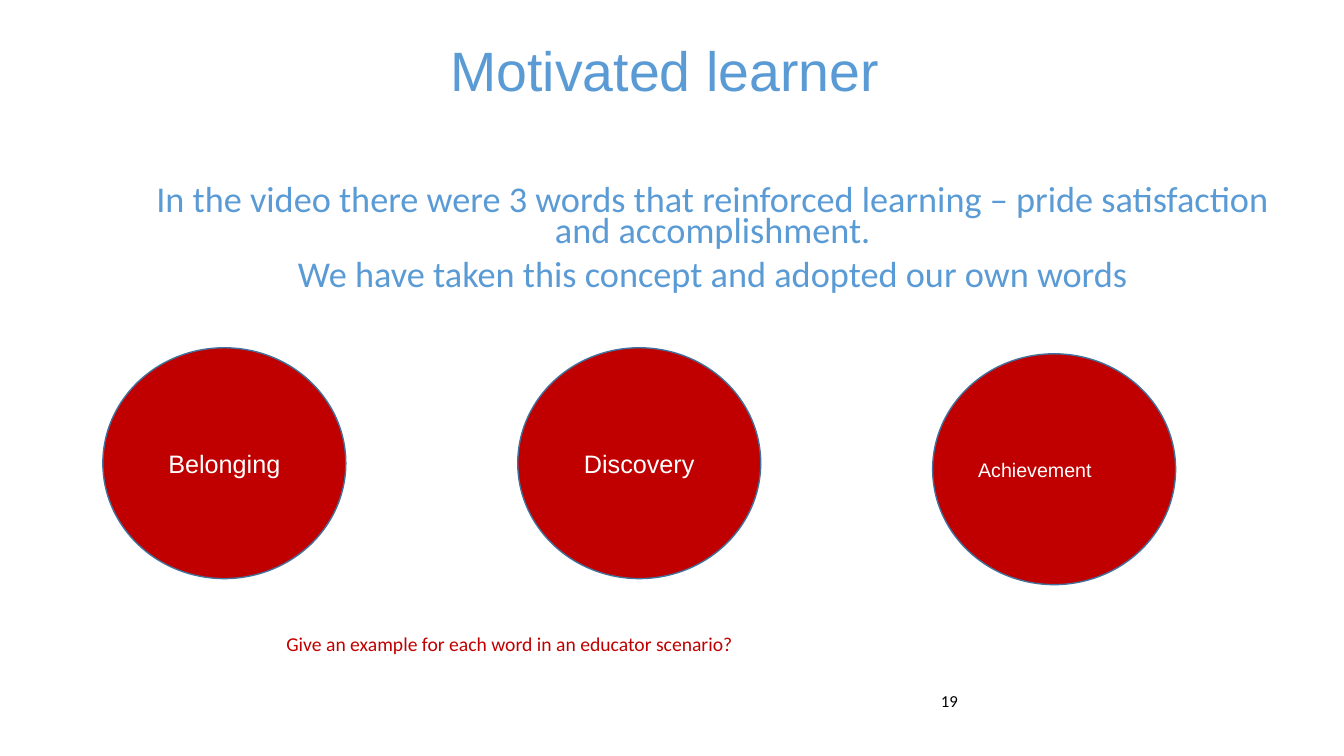
from pptx import Presentation
from pptx.dml.color import RGBColor
from pptx.enum.shapes import MSO_SHAPE as Shape
from pptx.enum.text import MSO_ANCHOR as Anchor, MSO_AUTO_SIZE as AutoSize, PP_ALIGN as Align
from pptx.util import Inches, Pt

BLUE = RGBColor(0x5B, 0x9B, 0xD5)
RED = RGBColor(0xC0, 0x00, 0x00)
OUTLINE = RGBColor(0x42, 0x71, 0x9B)
WHITE = RGBColor(0xFF, 0xFF, 0xFF)
BLACK = RGBColor(0x00, 0x00, 0x00)


def place(shape, left, top, width, height):
    shape.left, shape.top = Inches(left), Inches(top)
    shape.width, shape.height = Inches(width), Inches(height)


def write(shape, lines, font, size, color, align=Align.LEFT, spacing=1.0,
          inset=0.05, anchor=Anchor.TOP):
    """Fill the shape with one paragraph per line, all in the same format."""
    frame = shape.text_frame
    frame.text = "\n".join(lines)
    settings = {"word_wrap": True, "auto_size": AutoSize.NONE, "vertical_anchor": anchor}
    for side in ("left", "top", "right", "bottom"):
        settings[f"margin_{side}"] = Inches(inset)
    for name, value in settings.items():
        setattr(frame, name, value)
    for paragraph in frame.paragraphs:
        paragraph.alignment = align
        paragraph.line_spacing = spacing
        paragraph.space_before = Pt(0)
        for run in paragraph.runs:
            run.font.name = font
            run.font.size = Pt(size)
            run.font.color.rgb = color


prs = Presentation()
prs.slide_width, prs.slide_height = Inches(13.33), Inches(7.5)
slide = prs.slides.add_slide(prs.slide_layouts[5])

title = slide.shapes.title
place(title, 0.92, 0.38, 11.5, 0.72)
write(title, ["Motivated learner "], "Arial", 39.6, BLUE, Align.CENTER, 0.9)

# The introduction is centred in the area right of a one-inch indent
intro = slide.shapes.add_textbox(Inches(1.32), Inches(1.82), Inches(11.5), Inches(1.36))
write(intro, [
    "In the video there were 3 words that reinforced learning – pride satisfaction and accomplishment.",
    "We have taken this concept and adopted our own words",
], "Calibri", 25.9, BLUE, Align.CENTER, 0.7)
intro.text_frame.paragraphs[1].space_before = Pt(10)

page_number = slide.shapes.add_textbox(Inches(6.44), Inches(6.75), Inches(3.11), Inches(0.4))
write(page_number, ["19"], "Calibri", 12, BLACK, Align.RIGHT, anchor=Anchor.MIDDLE)

words = [
    ("Belonging", 3.45, 18, Align.CENTER),
    ("Discovery", 3.45, 18, Align.CENTER),
    ("Achievement", 3.51, 14, Align.LEFT),
]
for column, (word, top, size, align) in enumerate(words):
    circle = slide.shapes.add_shape(
        Shape.OVAL, Inches(1.02 + 4.115 * column), Inches(top), Inches(2.41), Inches(2.29))
    circle.shadow.inherit = False
    circle.fill.solid()
    circle.fill.fore_color.rgb = RED
    circle.line.color.rgb = OUTLINE
    circle.line.width = Pt(1)
    write(circle, [word], "Arial", size, WHITE, align, inset=0.1, anchor=Anchor.MIDDLE)

question = slide.shapes.add_textbox(Inches(2.84), Inches(6.3), Inches(7.65), Inches(0.87))
write(question, ["Give an example for each word in an educator scenario?"],
      "Calibri", 14, RED, spacing=0.9, inset=0)

prs.save("out.pptx")
